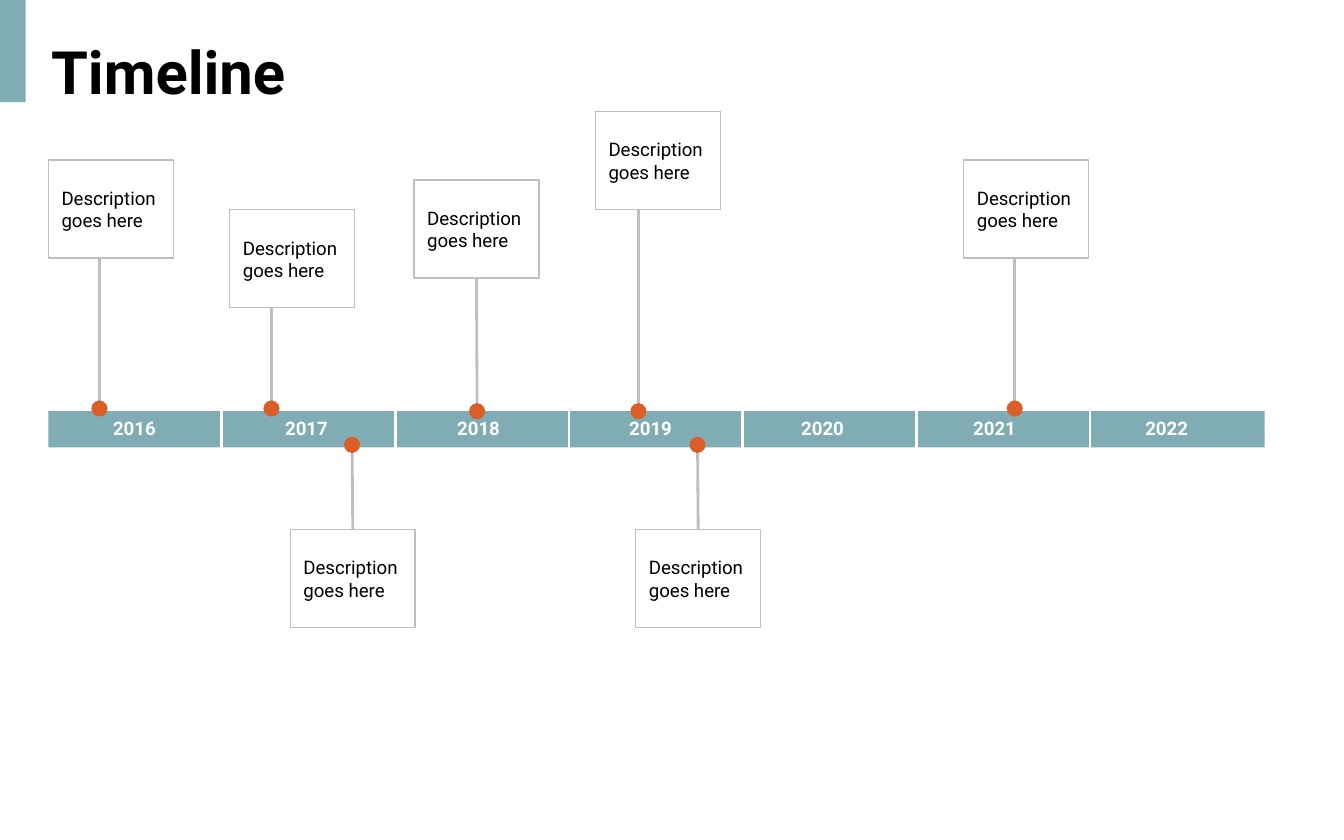
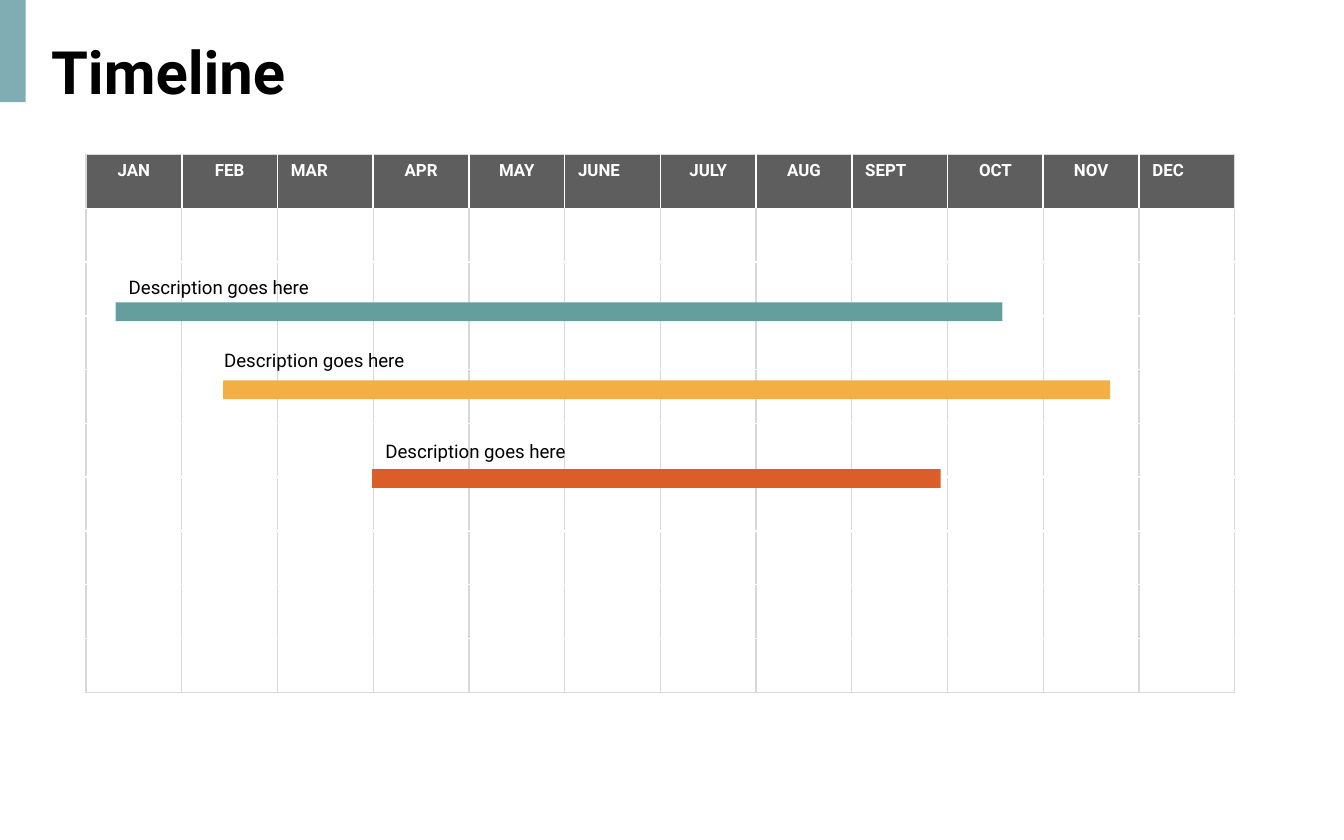
from dataclasses import dataclass

from lxml import etree
from pptx import Presentation
from pptx import util as u
from pptx.dml.color import RGBColor
from pptx.enum import shapes, text
from pptx.oxml.ns import qn


@dataclass(frozen=True)
class Theme:
    font: str = "Roboto"
    title_size: float = 32
    body_size: float = 10
    month_size: float = 9
    black: str = "000000"
    white: str = "FFFFFF"
    band: str = "80ADB4"
    stem: str = "BFBFBF"
    orange: str = "DB5E28"
    yellow: str = "F3AF43"
    teal: str = "649F9E"
    header: str = "5E5E5E"
    grid: str = "D8D8D8"


@dataclass(frozen=True)
class Event:
    stem_x: float
    dot_top: float
    card_left: float
    card_top: float
    stem_inset: float = 0.15  # how far the stem reaches behind the card
    below: bool = False


@dataclass(frozen=True)
class Task:
    left: float
    top: float
    width: float
    color: str
    label_left: float
    label_top: float


THEME = Theme()
DESCRIPTION = "Description goes here"
CARD_WIDTH, CARD_HEIGHT = 0.93, 0.73
DOT = 0.12
BAND_LEFT, BAND_TOP = 0.36, 3.06
YEARS = range(2016, 2023)
MONTHS = ("JAN", "FEB", "MAR", "APR", "MAY", "JUNE",
          "JULY", "AUG", "SEPT", "OCT", "NOV", "DEC")
LEFT_MONTHS = {"MAR", "JUNE", "SEPT", "DEC"}
TABLE_WIDTH, ROW_HEIGHT, ROW_COUNT = 8.55, 0.4, 10

EVENTS = (
    Event(3.55, 3.0, 3.08, 1.34),
    Event(4.75, 3.0, 4.43, 0.83),
    Event(2.02, 2.98, 1.71, 1.56, stem_inset=0.36),
    Event(0.74, 2.98, 0.36, 1.19),
    Event(2.62, 3.25, 2.16, 3.94, below=True),
    Event(5.19, 3.25, 4.73, 3.94, below=True),
    Event(7.55, 2.98, 7.17, 1.19),
)
TASKS = (
    Task(2.77, 3.49, 4.23, THEME.orange, 2.77, 3.22),
    Task(1.66, 2.83, 6.6, THEME.yellow, 1.57, 2.55),
    Task(0.86, 2.25, 6.6, THEME.teal, 0.86, 2.0),
)


def rgb(color: str) -> RGBColor:
    return RGBColor.from_string(color)


# Text and shapes
def write(frame, content: str, *, size: float = THEME.body_size,
          color: str = THEME.black, bold: bool = False,
          align=None, spacing: float | None = None) -> None:
    paragraph = frame.paragraphs[0]
    paragraph.alignment = align
    paragraph.line_spacing = spacing
    run = paragraph.add_run()
    run.text = content
    run.font.name = THEME.font
    run.font.size = u.Pt(size)
    run.font.bold = bold
    run.font.color.rgb = rgb(color)


def add_label(slide, content: str, left: float, top: float, width: float,
              height: float, *, inset: float | None = None,
              grow: bool = True, **style) -> None:
    label = slide.shapes.add_textbox(*map(u.Inches, (left, top, width, height)))
    frame = label.text_frame
    frame.word_wrap = True
    if grow:
        frame.auto_size = text.MSO_AUTO_SIZE.SHAPE_TO_FIT_TEXT
    if inset is not None:
        frame.margin_left = frame.margin_right = u.Inches(inset)
        frame.margin_top = frame.margin_bottom = u.Inches(inset)
    write(frame, content, **style)


def add_block(slide, left: float, top: float, width: float, height: float,
              fill: str, *, outline: str | None = None,
              kind=shapes.MSO_SHAPE.RECTANGLE):
    block = slide.shapes.add_shape(
        kind, *map(u.Inches, (left, top, width, height)))
    block.shadow.inherit = False
    block.fill.solid()
    block.fill.fore_color.rgb = rgb(fill)
    if outline:
        block.line.color.rgb = rgb(outline)
        block.line.width = u.Pt(0.75)
    else:
        block.line.fill.background()
    return block


def add_line(slide, x1: float, y1: float, x2: float, y2: float, color: str):
    line = slide.shapes.add_connector(
        shapes.MSO_CONNECTOR.STRAIGHT, *map(u.Inches, (x1, y1, x2, y2)))
    line.line.color.rgb = rgb(color)
    line.line.width = u.Pt(1.5)
    etree.SubElement(line._element.spPr, qn("a:effectLst"))
    return line


def new_slide(deck):
    slide = deck.slides.add_slide(deck.slide_layouts[6])
    add_label(slide, "Timeline", 0.36, 0.29, 5.15, 1.06, inset=0.02,
              grow=False, size=THEME.title_size, bold=True, spacing=0.93)
    add_block(slide, 0, 0, 0.19, 0.76, THEME.band)
    return slide


# Year timeline
def add_year_band(slide) -> None:
    add_block(slide, BAND_LEFT, BAND_TOP, 9.05, 0.27, THEME.band)
    divider_gap = (8.11 - 1.65) / 5
    for index in range(len(YEARS) - 1):
        x = 1.65 + index * divider_gap
        add_line(slide, x, 3.48, x, BAND_TOP, THEME.white)
    for index, year in enumerate(YEARS):
        add_label(slide, str(year), BAND_LEFT + index * 1.28, 3.05, 1.28, 0.54,
                  color=THEME.white, bold=True, align=text.PP_ALIGN.CENTER)


def add_event(slide, event: Event) -> None:
    stem = add_line(slide, event.stem_x, event.card_top + event.stem_inset,
                    event.stem_x, 3.29 if event.below else 3.05, THEME.stem)
    add_block(slide, event.stem_x - DOT / 2, event.dot_top, DOT, DOT,
              THEME.orange, kind=shapes.MSO_SHAPE.OVAL)
    card = add_block(slide, event.card_left, event.card_top, CARD_WIDTH,
                     CARD_HEIGHT, THEME.white, outline=THEME.stem)
    # A stem in the middle of its card is joined to the card's edge
    if abs(event.card_left + CARD_WIDTH / 2 - event.stem_x) < 0.02:
        stem.begin_connect(card, 0 if event.below else 2)
    add_label(slide, DESCRIPTION, event.card_left, event.card_top + 0.15,
              1.03, 0.44)


# Month schedule
def set_borders(cell, **sides: tuple[str, float]) -> None:
    properties = cell._tc.get_or_add_tcPr()
    for index, (side, (color, width)) in enumerate(sides.items()):
        border = etree.Element(qn(f"a:ln{side}"), w=str(u.Pt(width)))
        fill = etree.SubElement(border, qn("a:solidFill"))
        etree.SubElement(fill, qn("a:srgbClr"), val=color)
        properties.insert(index, border)


def add_month_grid(slide) -> None:
    table = slide.shapes.add_table(
        ROW_COUNT, len(MONTHS), u.Inches(0.64), u.Inches(1.15),
        u.Inches(TABLE_WIDTH), u.Inches(ROW_HEIGHT * ROW_COUNT)).table
    table.first_row = table.horz_banding = False
    grid_line, white_line = (THEME.grid, 0.75), (THEME.white, 1)
    last_column, last_row = len(MONTHS) - 1, ROW_COUNT - 1

    for column, month in enumerate(MONTHS):
        for row in range(ROW_COUNT):
            cell = table.cell(row, column)
            cell.fill.solid()
            if row == 0:
                cell.fill.fore_color.rgb = rgb(THEME.header)
                write(cell.text_frame, month, size=THEME.month_size,
                      color=THEME.white, bold=True,
                      align=None if month in LEFT_MONTHS
                      else text.PP_ALIGN.CENTER)
                set_borders(cell,
                            L=white_line if column else grid_line,
                            R=grid_line if column == last_column else white_line,
                            T=grid_line)
                continue
            cell.fill.fore_color.rgb = rgb(THEME.white)
            cell.margin_top = cell.margin_bottom = u.Inches(0.02)
            sides = {"L": grid_line, "R": grid_line}
            if row == last_row:
                sides["B"] = grid_line
            set_borders(cell, **sides)


def add_task(slide, task: Task) -> None:
    add_block(slide, task.left, task.top, task.width, 0.14, task.color)
    add_label(slide, DESCRIPTION, task.label_left, task.label_top, 2.2, 0.27)


def main() -> None:
    deck = Presentation()
    deck.slide_width, deck.slide_height = u.Inches(10), u.Inches(6.25)

    years = new_slide(deck)
    add_year_band(years)
    for event in EVENTS:
        add_event(years, event)

    schedule = new_slide(deck)
    add_month_grid(schedule)
    for task in TASKS:
        add_task(schedule, task)

    deck.save("out.pptx")


if __name__ == "__main__":
    main()
